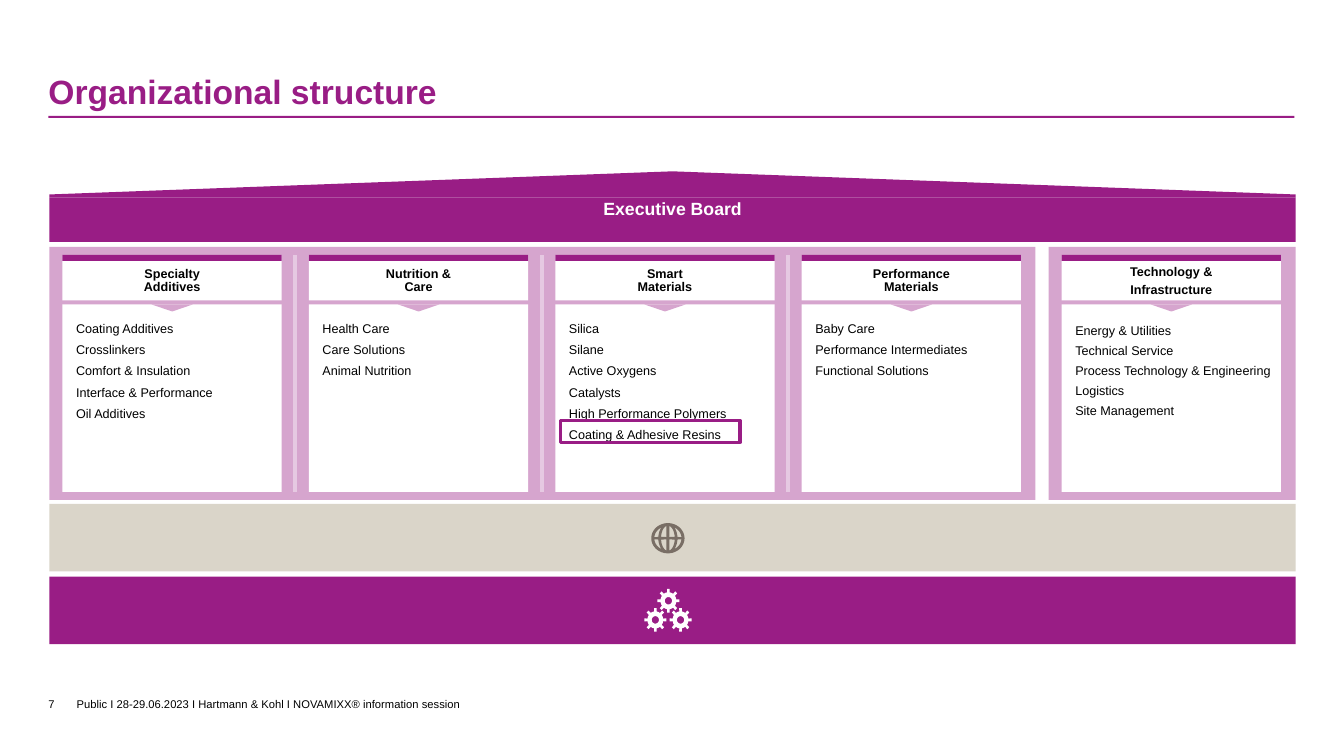
"""Build the organizational structure slide."""
from copy import deepcopy
from dataclasses import dataclass
from math import cos, pi, radians, sin

from pptx import Presentation
from pptx.dml.color import RGBColor
from pptx.enum.shapes import MSO_CONNECTOR, MSO_SHAPE
from pptx.enum.text import MSO_ANCHOR, MSO_AUTO_SIZE, PP_ALIGN
from pptx.oxml import parse_xml
from pptx.oxml.ns import nsdecls, qn
from pptx.util import Inches, Pt

RECT, TRIANGLE = MSO_SHAPE.RECTANGLE, MSO_SHAPE.ISOSCELES_TRIANGLE
STRAIGHT = MSO_CONNECTOR.STRAIGHT
LEFT, CENTER = PP_ALIGN.LEFT, PP_ALIGN.CENTER
TOP, MIDDLE, BOTTOM = MSO_ANCHOR.TOP, MSO_ANCHOR.MIDDLE, MSO_ANCHOR.BOTTOM


@dataclass(frozen=True)
class Theme:
    """Colours, font and type sizes of the slide."""
    purple: str = "991D85"
    lilac: str = "D6A5CE"
    pale: str = "E6C9E2"
    sand: str = "DAD5C9"
    taupe: str = "796E65"
    white: str = "FFFFFF"
    black: str = "000000"
    font: str = "Arial"
    title: float = 24
    board: float = 12.6
    body: float = 9
    footer: float = 8


T = Theme()
EDGE, FULL = 0.49, 12.36
CARD_X, CARD_STEP, CARD_W = 0.62, 2.444, 2.175
SERVICE_X = 10.53

DIVISIONS = [
    (["Specialty\vAdditives"],
     ["Coating Additives", "Crosslinkers", "Comfort & Insulation",
      "Interface & Performance", "Oil Additives"]),
    (["Nutrition &\vCare"],
     ["Health Care", "Care Solutions", "Animal Nutrition"]),
    (["Smart\vMaterials"],
     ["Silica", "Silane", "Active Oxygens", "Catalysts",
      "High Performance Polymers", "Coating & Adhesive Resins"]),
    (["Performance\vMaterials"],
     ["Baby Care", "Performance Intermediates", "Functional Solutions"]),
]
SERVICE = (["Technology &", "Infrastructure"],
           ["Energy & Utilities", "Technical Service",
            "Process Technology & Engineering", "Logistics", "Site Management"])


def write(sp, lines, size=T.body, color=T.black, bold=False, align=LEFT,
          anchor=TOP, spacing=1.0, after=0, insets=(0, 0, 0, 0)):
    """Fill a shape with formatted paragraphs."""
    tf = sp.text_frame
    tf.word_wrap, tf.auto_size = True, MSO_AUTO_SIZE.NONE
    tf.vertical_anchor = anchor
    (tf.margin_left, tf.margin_top,
     tf.margin_right, tf.margin_bottom) = map(Inches, insets)
    for i, line in enumerate(lines):
        p = tf.add_paragraph() if i else tf.paragraphs[0]
        p.text = line
        p.alignment, p.line_spacing = align, spacing
        p.space_before, p.space_after = Pt(0), Pt(after)
        for r in p.runs:
            r.font.name, r.font.size, r.font.bold = T.font, Pt(size), bold
            r.font.color.rgb = RGBColor.from_string(color)
        for br in p._p.findall(qn("a:br")):
            br.append(deepcopy(p.runs[0]._r.rPr))


def paint(sp, fill):
    """Give a shape a flat fill without line or shadow."""
    sp.shadow.inherit = False
    sp.fill.solid()
    sp.fill.fore_color.rgb = RGBColor.from_string(fill)
    sp.line.fill.background()
    return sp


def block(s, x, y, w, h, fill, kind=RECT):
    """Add a flat preset shape."""
    box = map(Inches, (x, y, w, h))
    return paint(s.shapes.add_shape(kind, *box), fill)


def label(s, x, y, w, h, text, **fmt):
    """Add a one-line text box."""
    write(s.shapes.add_textbox(*map(Inches, (x, y, w, h))), [text], **fmt)


def outline(s, contours, fill):
    """Add a freeform whose later contours are cut out of the first."""
    builder = None
    for contour in contours:
        points = [(Inches(x), Inches(y)) for x, y in contour]
        if builder is None:
            builder = s.shapes.build_freeform(*points[0])
        else:
            builder.move_to(*points[0])
        builder.add_line_segments(points[1:], close=True)
    return paint(builder.convert_to_shape(), fill)


def arc(rx, ry, start, end, steps=12):
    """Return points on an ellipse around zero, angles in degrees."""
    angles = [radians(start + (end - start) * i / steps) for i in range(steps + 1)]
    return [(rx * cos(a), ry * sin(a)) for a in angles]


def globe(s, cx, cy):
    """Draw a globe with eight panes cut out."""
    inner = [(0.014, 0.012)] + arc(0.068, 0.125, 6, 78)
    outer = arc(0.095, 0.145, 5, 49) + arc(0.135, 0.122, 62, 5)
    panes = [[(kx * x, ky * y) for x, y in pane]
             for pane in (inner, outer) for kx in (-1, 1) for ky in (-1, 1)]
    contours = [arc(0.165, 0.15, 0, 360, 48)] + panes
    outline(s, [[(cx + x, cy + y) for x, y in c] for c in contours], T.taupe)


def gear(s, cx, cy):
    """Draw a gear with eight teeth and a round hole."""
    teeth = [(r, i * pi / 4 + turn) for i in range(8)
             for r, turn in ((0.085, -0.16), (0.118, -0.12),
                             (0.118, 0.12), (0.085, 0.16), (0.085, pi / 8))]
    rim = [(cx + 0.93 * r * cos(a), cy + r * sin(a)) for r, a in teeth]
    hole = [(cx + x, cy + y) for x, y in arc(0.036, 0.037, 0, 360, 24)]
    outline(s, [rim, hole], T.white)


def card(s, x, heading, items, spacing=0.9, after=5.4):
    """Add one unit with its heading, pointer and list."""
    head = block(s, x, 2.53, CARD_W, 0.45, T.white)
    write(head, heading, bold=True, align=CENTER, anchor=MIDDLE,
          spacing=0.85, after=3.6, insets=(0, 0.07, 0, 0))
    block(s, x, 2.53, CARD_W, 0.06, T.purple)
    block(s, x, 3.02, CARD_W, 1.86, T.white)
    tip = block(s, x + (CARD_W - 0.41) / 2, 3.02, 0.41, 0.07, T.lilac, TRIANGLE)
    tip.rotation = 180
    entries = block(s, x + 0.135, 3.16, 2.03, 1.64, T.white)
    write(entries, items, spacing=spacing, after=after, insets=(0, 0.04, 0, 0))


def divider(s, x):
    """Add a vertical line between two cards."""
    c = s.shapes.add_connector(STRAIGHT, *map(Inches, (x, 4.88, x, 2.53)))
    c.line.width = Pt(2.75)
    c.line.color.rgb = RGBColor.from_string(T.pale)
    c._element.spPr.append(parse_xml(f"<a:effectLst {nsdecls('a')}/>"))


def set_title(s, text):
    """Place and format the title with its rule."""
    sp = s.shapes.title
    sp.left, sp.top, sp.width, sp.height = map(Inches, (0.48, 0.36, FULL, 0.75))
    write(sp, [text], size=T.title, color=T.purple, bold=True,
          anchor=BOTTOM, spacing=0.9)
    block(s, 0.48, 1.15, FULL, 0.02, T.purple)


def main():
    """Build and save the slide."""
    prs = Presentation()
    prs.slide_width, prs.slide_height = Inches(13.33), Inches(7.5)
    s = prs.slides.add_slide(prs.slide_layouts[5])
    set_title(s, "Organizational structure")
    label(s, 0.48, 6.92, 0.25, 0.13, "7", size=T.footer)
    label(s, 0.76, 6.92, 9.35, 0.13,
          "Public I 28-29.06.2023 I Hartmann & Kohl I NOVAMIXX® information session",
          size=T.footer)

    right = EDGE + FULL
    outline(s, [[(6.67, 1.7), (right, 1.93), (right, 1.96),
                 (EDGE, 1.96), (EDGE, 1.93)]], T.purple)
    board = block(s, EDGE, 1.96, FULL, 0.44, T.purple)
    write(board, ["Executive Board"], size=T.board, color=T.white, bold=True,
          align=CENTER, after=5.4, insets=(0.09, 0, 0.09, 0))

    block(s, EDGE, 2.45, 9.78, 2.51, T.lilac)
    block(s, 10.4, 2.45, 2.45, 2.51, T.lilac)
    for i, (heading, items) in enumerate(DIVISIONS):
        x = CARD_X + i * CARD_STEP
        if i:
            divider(s, x - 0.135)
        card(s, x, heading, items)
    card(s, SERVICE_X, *SERVICE, spacing=1.0, after=3.6)

    block(s, EDGE, 5, FULL, 0.67, T.sand)
    globe(s, 6.625, 5.34)
    block(s, EDGE, 5.72, FULL, 0.67, T.purple)
    for cx, cy in ((6.63, 5.96), (6.5, 6.15), (6.75, 6.15)):
        gear(s, cx, cy)

    frame = block(s, 5.56, 4.17, 1.78, 0.22, T.white)
    frame.fill.background()
    frame.line.width = Pt(2.25)
    frame.line.color.rgb = RGBColor.from_string(T.purple)
    prs.save("out.pptx")


if __name__ == "__main__":
    main()
